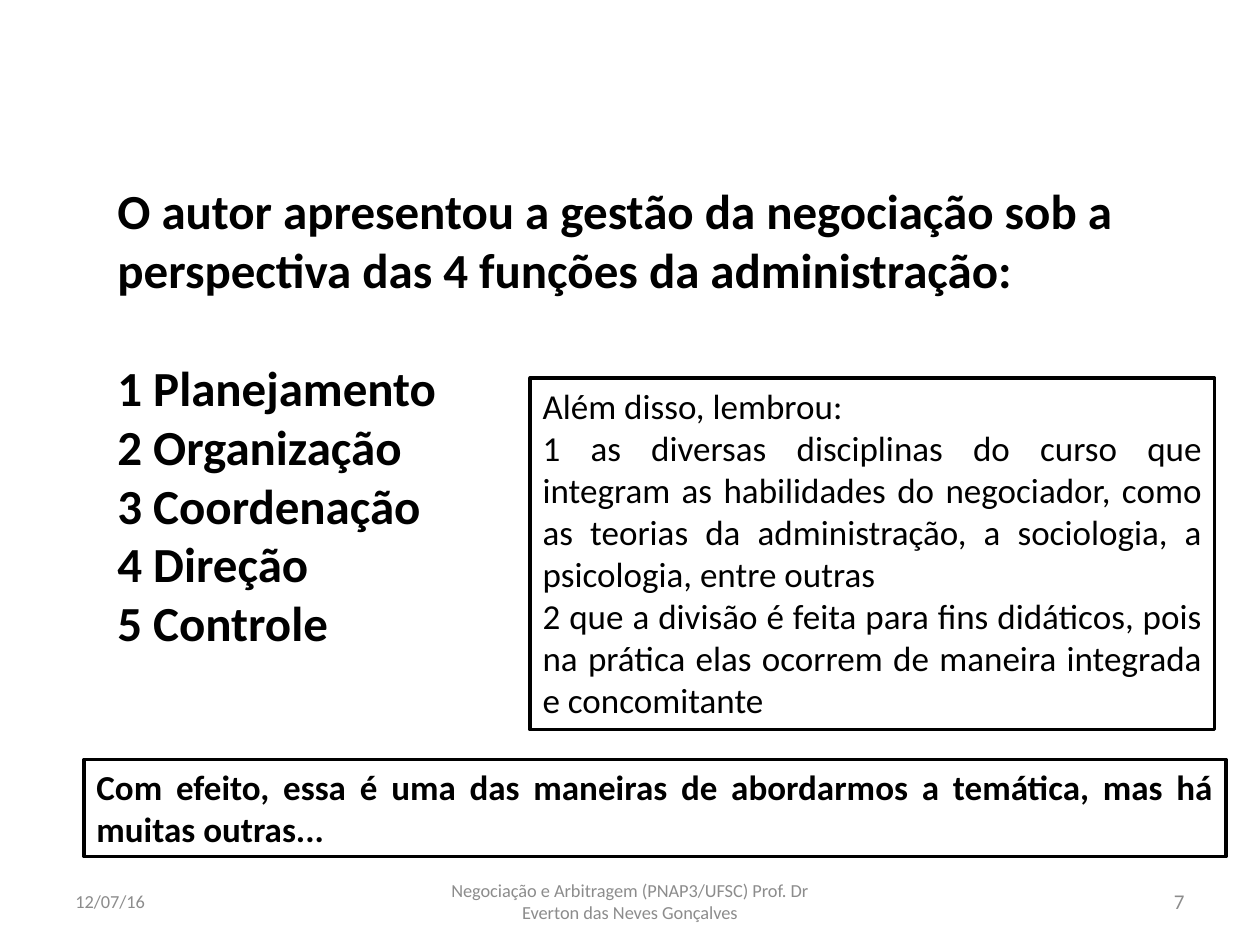
from pptx import Presentation
from pptx.dml.color import RGBColor
from pptx.enum import shapes, text
from pptx.util import Pt

BLACK = RGBColor(0x00, 0x00, 0x00)
WHITE = RGBColor(0xFF, 0xFF, 0xFF)
GRAY = RGBColor(0x8C, 0x8C, 0x8C)
FONT = "Calibri"
ALIGN = text.PP_ALIGN

LEAD = ("O autor apresentou a gestão da negociação sob a perspectiva "
        "das 4 funções da administração:")
FUNCTIONS = ["Planejamento", "Organização", "Coordenação", "Direção", "Controle"]
REMINDERS = [
    "Além disso, lembrou:",
    "1 as diversas disciplinas do curso que integram as habilidades do negociador, "
    "como as teorias da administração, a sociologia, a psicologia, entre outras",
    "2 que a divisão é feita para fins didáticos, pois na prática elas ocorrem de "
    "maneira integrada e concomitante",
]
CLOSING = ["Com efeito, essa é uma das maneiras de abordarmos a temática, "
           "mas há muitas outras..."]


def write(frame, lines, size, color=BLACK, bold=False, align=ALIGN.LEFT,
          anchor=text.MSO_ANCHOR.TOP):
    """Fill a text frame with one paragraph per line, all in one format."""
    frame.word_wrap = True
    frame.vertical_anchor = anchor
    font_format = {"name": FONT, "size": Pt(size), "bold": bold}
    for index, line in enumerate(lines):
        paragraph = frame.add_paragraph() if index else frame.paragraphs[0]
        paragraph.text = line
        paragraph.alignment = align
        for key, value in font_format.items():
            setattr(paragraph.font, key, value)
        paragraph.font.color.rgb = color


def add_functions(slide, left, top, width, height):
    frame = slide.shapes.add_textbox(Pt(left), Pt(top), Pt(width), Pt(height)).text_frame
    numbered = [f"{number} {name}" for number, name in enumerate(FUNCTIONS, 1)]
    write(frame, [LEAD] + numbered, 28, bold=True)
    frame.paragraphs[1].space_before = Pt(34)


def add_framed_note(slide, left, top, width, height, lines, bold=False):
    note = slide.shapes.add_shape(shapes.MSO_SHAPE.RECTANGLE,
                                  Pt(left), Pt(top), Pt(width), Pt(height))
    note.shadow.inherit = False
    note.fill.solid()
    note.fill.fore_color.rgb = WHITE
    note.line.color.rgb = BLACK
    note.line.width = Pt(2)
    write(note.text_frame, lines, 20, bold=bold, align=ALIGN.JUSTIFY)


def add_footer(slide, left, top, width, height):
    """Place date, course and page number at the left, centre and right."""
    side, middle = 168, 228
    parts = [
        (0, side, "12/07/16", 10.5, ALIGN.LEFT),
        ((width - middle) / 2, middle,
         "Negociação e Arbitragem (PNAP3/UFSC) Prof. Dr Everton das Neves Gonçalves",
         10.5, ALIGN.CENTER),
        (width - side, side, "7", 12, ALIGN.RIGHT),
    ]
    for offset, part_width, content, size, align in parts:
        box = slide.shapes.add_textbox(Pt(left + offset), Pt(top),
                                       Pt(part_width), Pt(height))
        write(box.text_frame, [content], size, GRAY, align=align,
              anchor=text.MSO_ANCHOR.MIDDLE)


def main():
    deck = Presentation()
    deck.slide_width, deck.slide_height = Pt(720), Pt(540)
    slide = deck.slides.add_slide(deck.slide_layouts[6])
    add_functions(slide, 60, 99.5, 663, 380)
    add_framed_note(slide, 48, 434, 652.5, 55.5, CLOSING, bold=True)
    add_framed_note(slide, 303, 216, 391, 201, REMINDERS)
    add_footer(slide, 36, 500.5, 648, 28.75)
    deck.save("out.pptx")


if __name__ == "__main__":
    main()
